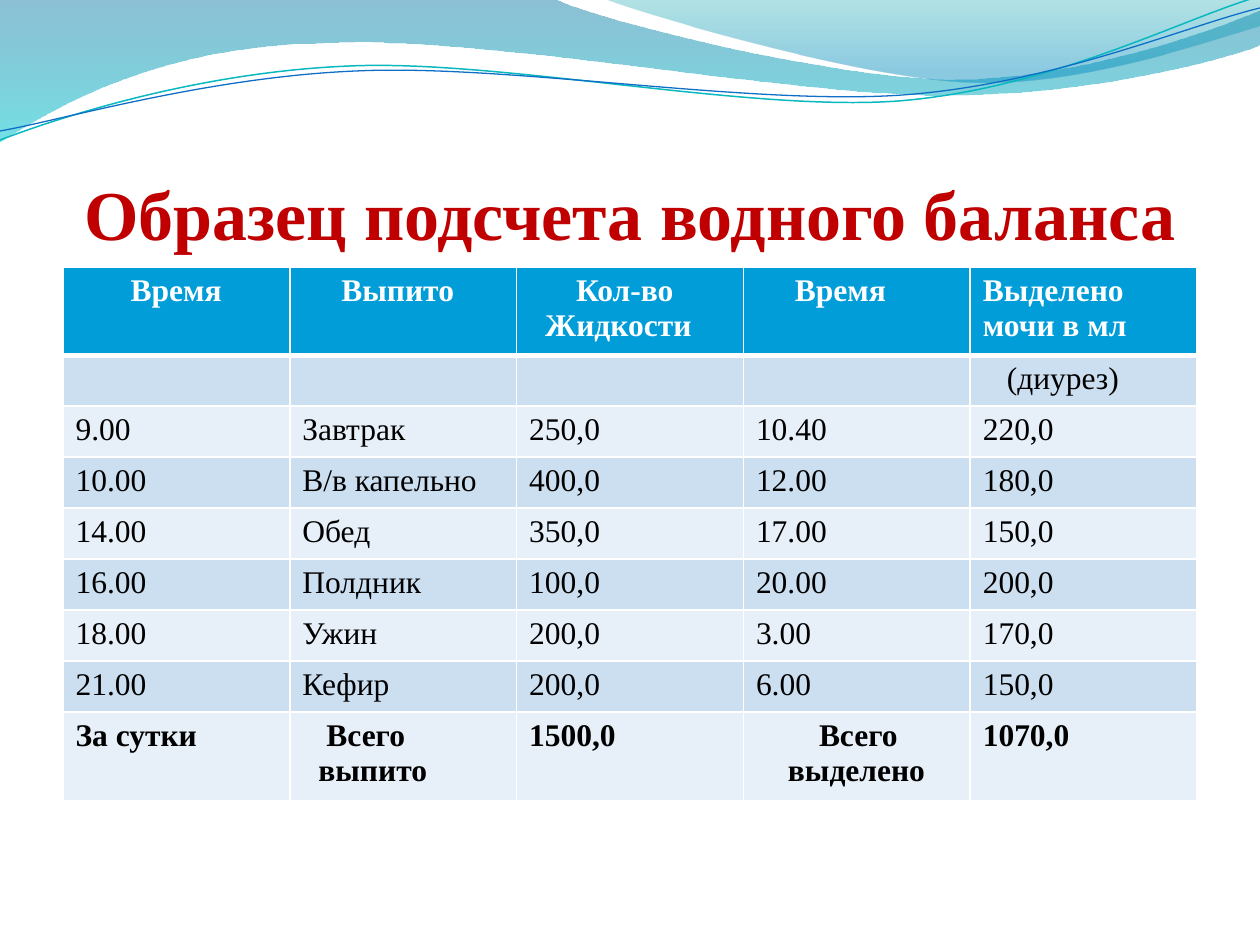
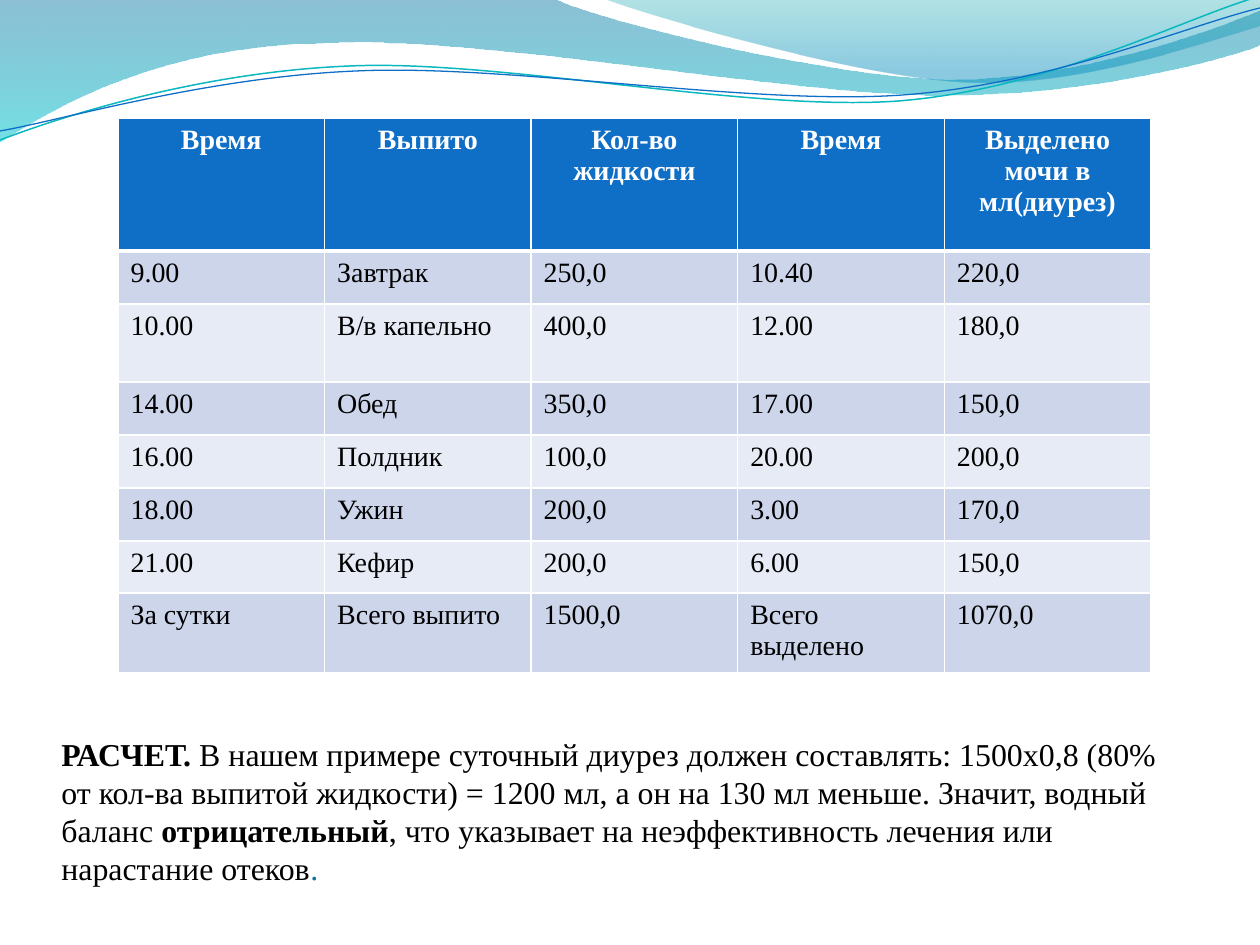
import lxml.etree
import pptx
import pptx.dml.color
import pptx.enum.text
import pptx.oxml.ns
import pptx.util

SCALE = 914400 / 126
FONT = "Times New Roman"
RGBColor = pptx.dml.color.RGBColor
WHITE = RGBColor(0xFF, 0xFF, 0xFF)
BLACK = RGBColor(0x00, 0x00, 0x00)
TITLE_RED = RGBColor(0xC0, 0x00, 0x00)
FULL_STOP_BLUE = RGBColor(0x00, 0x76, 0xA3)
SKY = RGBColor(0x00, 0x9D, 0xD9)
SKY_BAND = RGBColor(0xCC, 0xDF, 0xF1)
SKY_PALE = RGBColor(0xE7, 0xEF, 0xF8)
BLUE = RGBColor(0x0F, 0x6F, 0xC6)
BLUE_BAND = RGBColor(0xCC, 0xD5, 0xEA)
BLUE_PALE = RGBColor(0xE7, 0xEB, 0xF5)
TEAL = RGBColor(0x0A, 0xB8, 0xBF)
WAVE_DARK = RGBColor(0x00, 0x74, 0xA1)
WAVE_AQUA = RGBColor(0x00, 0xC6, 0xCF)
WAVE_GREEN = RGBColor(0x00, 0xA1, 0xA9)
WAVE_BLUE = RGBColor(0x00, 0x8B, 0xBF)
CENTER = pptx.enum.text.PP_ALIGN.CENTER
qn = pptx.oxml.ns.qn


def px(length):
    return pptx.util.Emu(round(length * SCALE))


def write(para, text, size=18, color=BLACK, bold=False, align=None, indent=0):
    span = para.add_run()
    span.text = text
    span.font.name = FONT
    span.font.size = pptx.util.Pt(size)
    span.font.color.rgb = color
    span.font.bold = bold
    if align is not None:
        para.alignment = align
    if indent:
        para._p.get_or_add_pPr().set("marL", str(px(indent)))


WAVES = [
    {
        "start": (0, 0),
        "segments": [
            [(554, -1)],
            [(600, 21), (837, 79), (955, 79)],
            [(1075, 79), (1207, 33), (1260, 11)],
            [(1261, 45)],
            [(1239, 55), (1096, 96), (940, 95)],
            [(784, 95), (481, 35), (324, 43)],
            [(163, 45), (58, 105), (-1, 142)],
        ],
        "stops": [(0, WAVE_DARK, 45), (1, WAVE_AQUA, 55)],
    },
    {
        "start": (604, -1),
        "segments": [
            [(641, 14), (859, 78), (969, 82)],
            [(1079, 87), (1211, 40), (1260, 26)],
            [(1260, 0)],
        ],
        "stops": [(0, WAVE_GREEN, 30), (0.8, WAVE_BLUE, 45)],
    },
    {
        "start": (0, 140),
        "segments": [
            [(60, 117), (199, 72), (349, 66)],
            [(498, 59), (747, 112), (898, 101)],
            [(1050, 89), (1182, 19), (1257, -3)],
        ],
        "line": (TEAL, 0.85),
    },
    {
        "start": (0, 131),
        "segments": [
            [(59, 121), (207, 77), (357, 71)],
            [(508, 64), (752, 106), (903, 95)],
            [(1053, 84), (1186, 26), (1260, 8)],
        ],
        "line": (BLUE, 0.75),
    },
]

READINGS = [
    ["9.00", "Завтрак", "250,0", "10.40", "220,0"],
    ["10.00", "В/в капельно", "400,0", "12.00", "180,0"],
    ["14.00", "Обед", "350,0", "17.00", "150,0"],
    ["16.00", "Полдник", "100,0", "20.00", "200,0"],
    ["18.00", "Ужин", "200,0", "3.00", "170,0"],
    ["21.00", "Кефир", "200,0", "6.00", "150,0"],
]

BALANCE_TABLES = [
    {
        "corner": (63, 267),
        "width": 1134,
        "heights": [82] + [51] * 7 + [82],
        "rows": [
            ["Время", "Выпито", "Кол-во\nЖидкости", "Время", "Выделено мочи в мл"],
            ["", "", "", "", "(диурез)"],
            *READINGS,
            ["За сутки", "Всего\nвыпито", "1500,0", "Всего\nвыделено", "1070,0"],
        ],
        "indents": {
            (0, 0): [55], (0, 1): [39], (0, 2): [47, 16], (0, 3): [39],
            (1, 4): [24], (8, 1): [24, 16], (8, 3): [63, 32],
        },
        "fills": (SKY, SKY_BAND, SKY_PALE),
        "size": 18,
        "header_align": None,
        "bold_rows": (0, 8),
    },
    {
        "corner": (118, 118),
        "width": 1033,
        "heights": [133, 53, 78, 53, 53, 53, 52, 78],
        "rows": [
            ["Время", "Выпито", "Кол-во жидкости", "Время", "Выделено мочи в мл(диурез)"],
            *READINGS,
            ["За сутки", "Всего выпито", "1500,0", "Всего выделено", "1070,0"],
        ],
        "indents": {},
        "fills": (BLUE, BLUE_BAND, BLUE_PALE),
        "size": 16,
        "header_align": CENTER,
        "bold_rows": (0,),
    },
]

deck = pptx.Presentation()
deck.slide_width = px(1260)
deck.slide_height = px(945)
blank = deck.slide_layouts[6]
sample_page = deck.slides.add_slide(blank)
calculation_page = deck.slides.add_slide(blank)

for wave in WAVES:
    corners = [(px(x), px(y)) for segment in wave["segments"] for x, y in segment]
    builder = sample_page.shapes.build_freeform(*map(px, wave["start"]), scale=1.0)
    builder.add_line_segments(corners, close="stops" in wave)
    shape = builder.convert_to_shape()
    strokes = iter(list(shape._element.iter(qn("a:lnTo"))))
    for segment in wave["segments"]:
        stroke = next(strokes)
        if len(segment) == 3:
            stroke.tag = qn("a:cubicBezTo")
            for _ in range(2):
                control = next(strokes)
                stroke.append(control[0])
                control.getparent().remove(control)
    shape.shadow.inherit = False
    if "stops" in wave:
        shape.line.fill.background()
        shape.fill.gradient()
        shape.fill.gradient_angle = 270
        for stop, (position, color, _) in zip(shape.fill.gradient_stops, wave["stops"]):
            stop.position = position
            stop.color.rgb = color
        tints = shape._element.spPr.iter(qn("a:srgbClr"))
        for tint, (_, _, opacity) in zip(tints, wave["stops"]):
            lxml.etree.SubElement(tint, qn("a:alpha"), val=str(opacity * 1000))
    else:
        shape.fill.background()
        shape.line.color.rgb = wave["line"][0]
        shape.line.width = pptx.util.Pt(wave["line"][1])
    blank.shapes._spTree.append(shape._element)

box = sample_page.shapes.add_textbox(px(63), px(97), px(1134), px(158))
frame = box.text_frame
frame.word_wrap = True
frame.vertical_anchor = pptx.enum.text.MSO_ANCHOR.BOTTOM
frame.margin_left = frame.margin_right = frame.margin_bottom = 0
write(frame.paragraphs[0], "Образец подсчета водного баланса",
      size=40, color=TITLE_RED, bold=True, align=CENTER)

box = calculation_page.shapes.add_textbox(px(49), px(728), px(1123), px(142))
box.text_frame.word_wrap = True
para = box.text_frame.paragraphs[0]
para.space_before = pptx.util.Pt(3)
for text, bold, color in [
    ("РАСЧЕТ.", True, BLACK),
    ("\u00a0В нашем примере суточный диурез должен составлять: 1500x0,8 (80% от кол-ва "
     "выпитой жидкости) = 1200 мл, а он на 130 мл меньше. Значит, водный баланс ", False, BLACK),
    ("отрицательный", True, BLACK),
    (", что указывает на неэффективность лечения или нарастание отеков", False, BLACK),
    (".", False, FULL_STOP_BLUE),
]:
    write(para, text, size=18.2, color=color, bold=bold)

for page, balance in zip(deck.slides, BALANCE_TABLES):
    rows = balance["rows"]
    table = page.shapes.add_table(
        len(rows), 5, *map(px, balance["corner"]),
        px(balance["width"]), px(sum(balance["heights"])),
    ).table
    for column in table.columns:
        column.width = px(balance["width"] / 5)
    for row_index, labels in enumerate(rows):
        table.rows[row_index].height = px(balance["heights"][row_index])
        header = row_index == 0
        for column_index, label in enumerate(labels):
            cell = table.cell(row_index, column_index)
            properties = cell._tc.get_or_add_tcPr()
            for side in ("lnL", "lnR", "lnT", "lnB"):
                thick = (row_index, side) in ((0, "lnB"), (1, "lnT"))
                border = lxml.etree.SubElement(
                    properties, qn("a:" + side), w=str(pptx.util.Pt(3 if thick else 1)))
                paint = lxml.etree.SubElement(border, qn("a:solidFill"))
                lxml.etree.SubElement(paint, qn("a:srgbClr"), val=str(WHITE))
            cell.fill.solid()
            cell.fill.fore_color.rgb = balance["fills"][0 if header else 2 - row_index % 2]
            if not label:
                continue
            lines = label.split("\n")
            indents = balance["indents"].get((row_index, column_index), [0] * len(lines))
            for line_index, line in enumerate(lines):
                frame = cell.text_frame
                para = frame.add_paragraph() if line_index else frame.paragraphs[0]
                write(para, line, size=balance["size"], color=WHITE if header else BLACK,
                      bold=row_index in balance["bold_rows"],
                      align=balance["header_align"] if header else None,
                      indent=indents[line_index])

deck.save("out.pptx")
